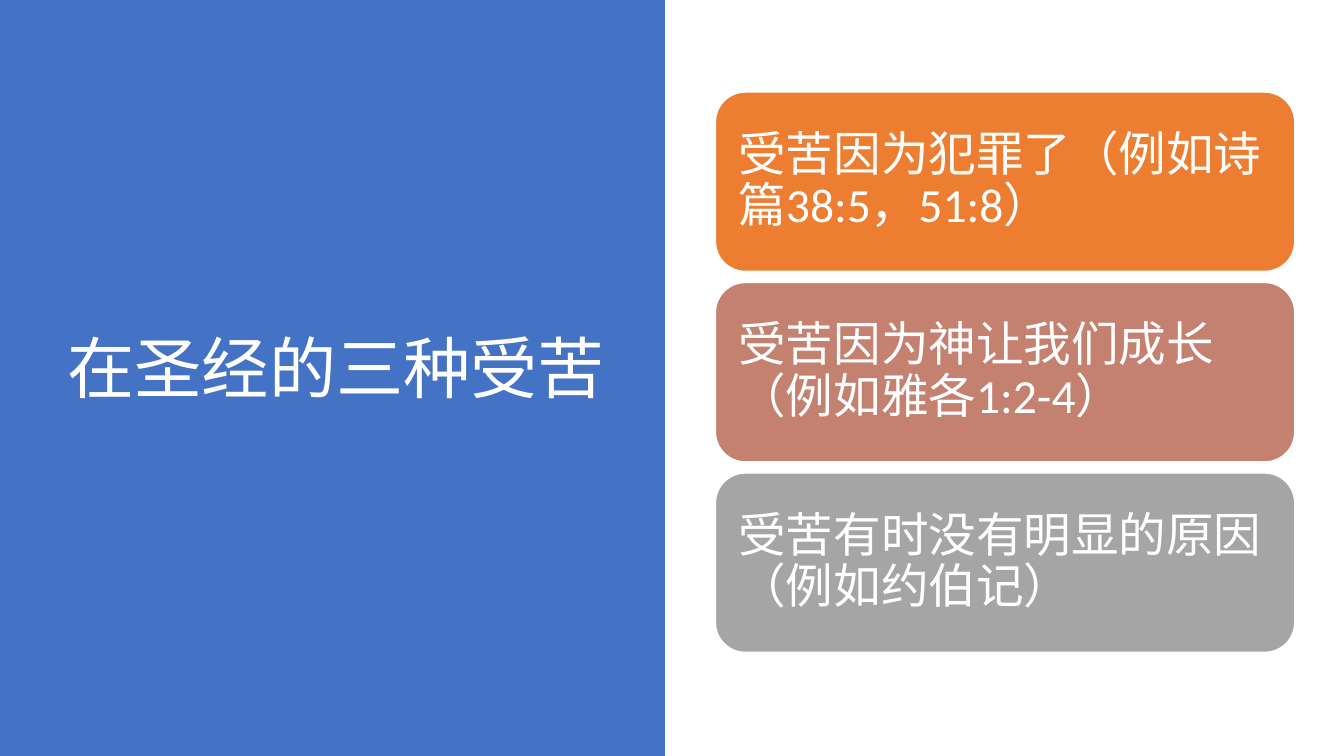
from dataclasses import dataclass

from pptx import Presentation
from pptx.dml.color import RGBColor
from pptx.enum.shapes import MSO_SHAPE
from pptx.enum.text import MSO_ANCHOR, MSO_AUTO_SIZE, PP_ALIGN
from pptx.util import Cm, Pt


@dataclass(frozen=True)
class Theme:
    font: str = "Calibri"
    white: str = "FFFFFF"
    panel: str = "4472C4"
    cards: tuple = ("ED7D31", "C48170", "A5A5A5")
    title_size: int = 48
    card_size: int = 34
    line_spacing: float = 0.9


class SlideBuilder:
    def __init__(self, page, theme):
        self.page = page
        self.theme = theme

    def set_text(self, shape, text, size):
        frame = shape.text_frame
        frame.word_wrap = True
        frame.auto_size = MSO_AUTO_SIZE.NONE
        frame.vertical_anchor = MSO_ANCHOR.MIDDLE
        para = frame.paragraphs[0]
        para.alignment = PP_ALIGN.LEFT
        para.line_spacing = self.theme.line_spacing
        span = para.add_run()
        span.text = text
        span.font.name = self.theme.font
        span.font.size = Pt(size)
        span.font.color.rgb = RGBColor.from_string(self.theme.white)

    def block(self, kind, left, top, width, height, color):
        shape = self.page.shapes.add_shape(kind, Cm(left), Cm(top), Cm(width), Cm(height))
        shape.shadow.inherit = False
        shape.fill.solid()
        shape.fill.fore_color.rgb = RGBColor.from_string(color)
        shape.line.fill.background()
        return shape

    def panel(self, left, top, width, height):
        self.block(MSO_SHAPE.RECTANGLE, left, top, width, height, self.theme.panel)

    def title(self, text, left, top, width, height):
        title = self.page.shapes.title
        title.left, title.top = Cm(left), Cm(top)
        title.width, title.height = Cm(width), Cm(height)
        self.set_text(title, text, self.theme.title_size)
        title.element.getparent().append(title.element)

    def card(self, text, color, left, top, width, height):
        card = self.block(MSO_SHAPE.ROUNDED_RECTANGLE, left, top, width, height, color)
        card.line.color.rgb = RGBColor.from_string(self.theme.white)
        card.line.width = Pt(1)
        frame = card.text_frame
        frame.margin_left = frame.margin_right = Cm(0.36)
        frame.margin_top = frame.margin_bottom = Cm(0.36)
        self.set_text(card, text, self.theme.card_size)


def main():
    deck = Presentation()
    deck.slide_width, deck.slide_height = Cm(33.87), Cm(19.05)
    theme = Theme()
    builder = SlideBuilder(deck.slides.add_slide(deck.slide_layouts[5]), theme)

    builder.panel(0, 0, 16.76, 19.05)
    builder.title("在圣经的三种受苦", 1.45, 1.73, 14.4, 15.29)

    reasons = (
        "受苦因为犯罪了（例如诗篇38:5，51:8）",
        "受苦因为神让我们成长（例如雅各1:2-4）",
        "受苦有时没有明显的原因（例如约伯记）",
    )
    first_top, pitch = 2.32, 4.8
    for index, (reason, color) in enumerate(zip(reasons, theme.cards)):
        builder.card(reason, color, 18.03, first_top + index * pitch, 14.6, 4.52)

    deck.save("out.pptx")


if __name__ == "__main__":
    main()
